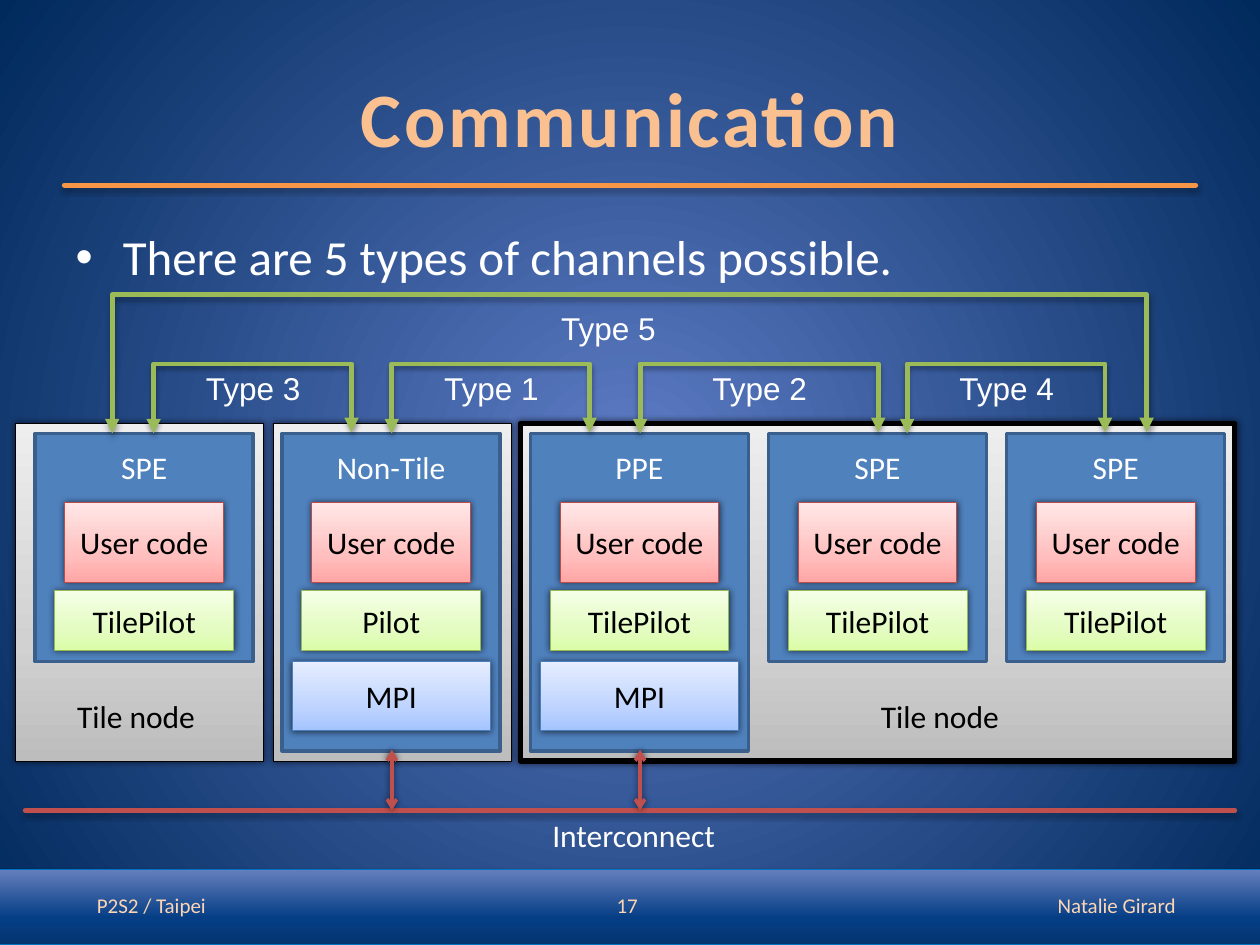
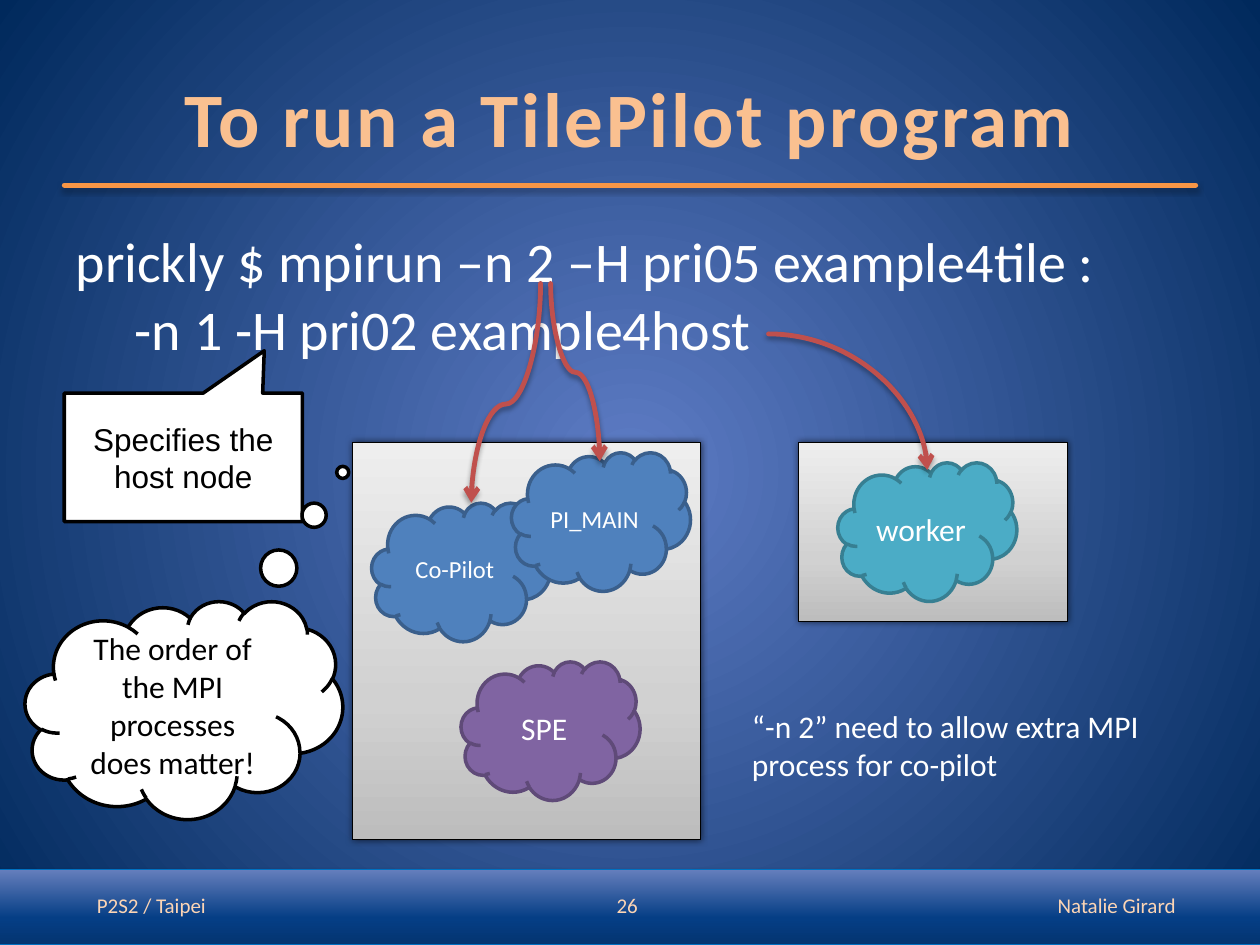
from lxml.etree import SubElement
from pptx import Presentation
from pptx.dml.color import RGBColor
from pptx.enum.shapes import MSO_CONNECTOR, MSO_SHAPE
from pptx.enum.text import MSO_ANCHOR, PP_ALIGN
from pptx.oxml.ns import qn
from pptx.util import Inches, Pt

COLUMNS, ROWS = 100, 75
COLORS = {
    "title": "FAC090", "footer": "FCD5B5", "rule": "F79646", "white": "FFFFFF",
    "black": "000000", "red": "C0504D", "green": "9BBB59", "band_line": "0070C0",
    "blue": "4F81BD", "blue_line": "3A5F8C", "purple": "8064A2", "purple_line": "5F4A78",
    "aqua": "4BACC6", "aqua_line": "377F92", "code_line": "BF4C48",
    "pilot_line": "98B955", "mpi_line": "4B7EBC",
}
GRADIENTS = {
    "page": {0: "5E7CC5", 100: "00295C"},
    "band": {0: "043470", 35: "053E85", 100: "667FBD"},
    "node": {0: "BDBDBD", 35: "D1D1D1", 100: "EEEEEE"},
    "code": {0: "FFA6A5", 35: "FFC0BF", 100: "FFE7E7"},
    "pilot": {0: "DAFDA7", 35: "E4FCC2", 100: "F5FFE7"},
    "mpi": {0: "A4C4FF", 35: "BFD4FF", 100: "E6EEFF"},
}
# opacity in percent, blur and distance in points, angle in degrees
SHADOWS = {"drop": (35, 3.1, 2, 90), "halo": (64, 4, 0, 0)}


def color(name):
    return RGBColor.from_string(COLORS[name])


def paint_gradient(gradient, name, radial=False):
    """Refill an a:gradFill element, from the centre out or from the bottom up."""
    for child in list(gradient):
        gradient.remove(child)
    stops = SubElement(gradient, qn("a:gsLst"))
    for position, value in GRADIENTS[name].items():
        stop = SubElement(stops, qn("a:gs"), pos=str(position * 1000))
        SubElement(stop, qn("a:srgbClr"), val=value)
    if radial:
        circle = SubElement(gradient, qn("a:path"), path="circle")
        SubElement(circle, qn("a:fillToRect"), dict.fromkeys("ltrb", "50000"))
    else:
        SubElement(gradient, qn("a:lin"), ang="16200000", scaled="0")


def cast_shadow(shape, name=None):
    """Replace the theme shadow; call it after the outline is set."""
    properties = shape._element.spPr
    effects = properties.find(qn("a:effectLst"))
    if effects is None:
        effects = SubElement(properties, qn("a:effectLst"))
    if name:
        opacity, blur, distance, angle = SHADOWS[name]
        shadow = SubElement(
            effects, qn("a:outerShdw"), blurRad=str(Pt(blur)), dist=str(Pt(distance)),
            dir=str(angle * 60000), rotWithShape="0")
        black = SubElement(shadow, qn("a:srgbClr"), val=COLORS["black"])
        SubElement(black, qn("a:alpha"), val=str(opacity * 1000))


class Deck:
    """Holds the style and the current page; lengths are grid columns and rows."""

    def __init__(self):
        self.file = Presentation()
        self.file.slide_width, self.file.slide_height = Inches(10), Inches(7.5)
        master = self.file.slide_master
        master.background.fill.gradient()
        paint_gradient(master.element.find(".//" + qn("a:gradFill")), "page", radial=True)
        self.page = None

    def x(self, columns):
        return round(self.file.slide_width * columns / COLUMNS)

    def y(self, rows):
        return round(self.file.slide_height * rows / ROWS)

    def frame(self, at):
        left, top, width, height = at
        return self.x(left), self.y(top), self.x(width), self.y(height)

    def place(self, shape, at):
        shape.left, shape.top, shape.width, shape.height = self.frame(at)

    def span(self, para, text, size, ink="white", font="Calibri"):
        span = para.add_run()
        span.text = text
        span.font.size, span.font.name = Pt(size), font
        span.font.color.rgb = color(ink)
        return span

    def add_page(self, title, number):
        self.page = self.file.slides.add_slide(self.file.slide_layouts[1])
        heading = self.page.shapes.title
        self.place(heading, (5, 1.5, 90, 15.5))
        span = self.span(heading.text_frame.paragraphs[0], title, 44, "title")
        span.font.bold = True
        span._r.get_or_add_rPr().set("spc", "150")
        self.box((-1.2, 69, 102.4, 6), "band", "band_line", shadow="drop")
        self.line((5.1, 14.7), (94.9, 14.7), "rule")
        for left, width, text, align in (
                (6.7, 16.5, "P2S2 / Taipei", PP_ALIGN.LEFT),
                (44.5, 7.1, number, PP_ALIGN.RIGHT),
                (76, 18.3, "Natalie Girard", PP_ALIGN.RIGHT)):
            self.label((left, 69.8, width, 4), [text], align, 12, "footer")

    def body(self, lines, size, bullet=True):
        """Write one paragraph; further lines hang under the first."""
        body = self.page.placeholders[1]
        self.place(body, (5, 17.5, 90, 49.5))
        para = body.text_frame.paragraphs[0]
        for index, text in enumerate(lines):
            if index:
                para.add_line_break()
            self.span(para, text, size)
        if not bullet:
            settings = para._p.get_or_add_pPr()
            settings.set("marL", str(Inches(0.47)))
            settings.set("indent", str(-Inches(0.47)))
            SubElement(settings, qn("a:buNone"))

    def label(self, at, lines, align=PP_ALIGN.CENTER, size=18, ink="white", font="Calibri"):
        frame = self.page.shapes.add_textbox(*self.frame(at)).text_frame
        frame.word_wrap = True
        frame.vertical_anchor = MSO_ANCHOR.MIDDLE
        for index, text in enumerate(lines):
            para = frame.add_paragraph() if index else frame.paragraphs[0]
            para.alignment = align
            self.span(para, text, size, ink, font)

    def box(self, at, fill, outline, weight=0.5, text="", size=18, ink="black",
            font="Calibri", kind=MSO_SHAPE.RECTANGLE, shadow=None, adjust=()):
        shape = self.page.shapes.add_shape(kind, *self.frame(at))
        for index, value in enumerate(adjust):
            shape.adjustments[index] = value
        if fill in GRADIENTS:
            shape.fill.gradient()
            paint_gradient(shape._element.spPr.find(qn("a:gradFill")), fill)
        else:
            shape.fill.solid()
            shape.fill.fore_color.rgb = color(fill)
        shape.line.color.rgb, shape.line.width = color(outline), Pt(weight)
        shape.shadow.inherit = False
        cast_shadow(shape, shadow)
        if text:
            frame = shape.text_frame
            frame.word_wrap = True
            frame.vertical_anchor = MSO_ANCHOR.MIDDLE
            para = frame.paragraphs[0]
            para.alignment = PP_ALIGN.CENTER
            self.span(para, text, size, ink, font)

    def line(self, start, end, ink, weight=2.75, head=None, tail=None,
             kind=MSO_CONNECTOR.STRAIGHT, shadow="drop"):
        connector = self.page.shapes.add_connector(
            kind, self.x(start[0]), self.y(start[1]), self.x(end[0]), self.y(end[1]))
        connector.line.color.rgb, connector.line.width = color(ink), Pt(weight)
        outline = connector.line._get_or_add_ln()
        outline.set("cap", "rnd")
        for tag, arrow in (("a:headEnd", head), ("a:tailEnd", tail)):
            if arrow:
                SubElement(outline, qn(tag), type=arrow)
        cast_shadow(connector, shadow)
        return connector

    def upright_line(self, start, end, bend, turn, ink, **style):
        """Connector that leaves vertically: laid out flat, then turned a quarter.

        bend is the share of the height at which it crosses over.
        """
        sign = 1 if turn == 90 else -1
        middle = [(a + b) / 2 for a, b in zip(start, end)]
        across, down = [(b - a) / 2 * sign for a, b in zip(start, end)]
        connector = self.line((middle[0] - down, middle[1] + across),
                              (middle[0] + down, middle[1] - across), ink, **style)
        connector.rotation = turn
        guides = connector._element.spPr.find(qn("a:prstGeom")).find(qn("a:avLst"))
        SubElement(guides, qn("a:gd"), name="adj1", fmla=f"val {round(bend * 100000)}")

    def bracket(self, left, right, rise):
        foot, slack = 34.4, 0.1
        self.upright_line((left, foot), (right, foot - slack), rise / slack, 90, "green",
                          head="triangle", tail="triangle", kind=MSO_CONNECTOR.ELBOW)

    def processor(self, left, name, library, has_mpi):
        """Blue unit with its software layers centred inside."""
        width = 17.3
        self.box((left, 34.4, width, 25.2 if has_mpi else 18.1), "blue", "blue_line", 2)
        layers = [("User code", "code", 39.9, 12.6, 6.3), (library, "pilot", 46.9, 14.2, 4.7)]
        if has_mpi:
            layers.append(("MPI", "mpi", 52.5, 15.7, 5.5))
        for text, style, top, size, height in layers:
            self.box((left + (width - size) / 2, top, size, height), style,
                     style + "_line", text=text, shadow="halo")
        self.label((left, 35.1, width, 4), [name])

    def cloud(self, left, top, text, fill, size=18):
        self.box((left, top, 14.2, 11), fill, fill + "_line", 2, text, size, "white",
                 kind=MSO_SHAPE.CLOUD)


def communication_page(deck):
    deck.add_page("Communication", "17")
    deck.body(["There are 5 types of channels possible."], 28)
    for left, width, weight in ((1.2, 19.7, 0.5), (21.7, 18.9, 0.5), (41.3, 56.7, 3)):
        deck.box((left, 33.6, width, 26.8), "node", "black", weight, shadow="halo")
    for left, name, library, has_mpi in (
            (2.8, "SPE", "TilePilot", False), (22.4, "Non-Tile", "Pilot", True),
            (42.1, "PPE", "TilePilot", True), (61, "SPE", "TilePilot", False),
            (79.9, "SPE", "TilePilot", False)):
        deck.processor(left, name, library, has_mpi)
    for center in (10.8, 74.6):
        deck.label((center - 7, 54.8, 14, 4), ["Tile node"], ink="black")

    deck.line((2, 64.3), (98, 64.3), "red")
    deck.label((41.5, 64.3, 17.6, 4), ["Interconnect"])
    for center in (31.1, 50.8):
        deck.line((center, 59.5), (center, 64.3), "red", 2, "arrow", "arrow", shadow="halo")

    for text, left, right, rise, center, top in (
            ("Type 1", 31.1, 46.8, 5.6, 39, 28.8), ("Type 2", 50.8, 69.7, 5.6, 60.3, 28.8),
            ("Type 3", 12.2, 27.9, 5.6, 20.1, 28.8), ("Type 4", 72, 87.7, 5.6, 79.9, 28.8),
            ("Type 5", 8.9, 91, 11.2, 48.3, 24)):
        deck.bracket(left, right, rise)
        deck.label((center - 6, top, 12, 4), [text], font="Arial")


def run_page(deck):
    deck.add_page("To run a TilePilot program", "26")
    deck.body(["prickly $ mpirun –n 2 –H pri05 example4tile :",
               "-n 1 -H pri02 example4host"], 32, bullet=False)
    for host in ((63.4, 35.1, 21.3, 14.2), (28, 35.1, 27.6, 31.5)):
        deck.box(host, "node", "black", shadow="halo")
    deck.cloud(36.6, 52.5, "SPE", "purple")
    deck.cloud(66.5, 36.7, "worker", "aqua")
    deck.cloud(29.5, 39.9, "Co-Pilot", "blue", 14)
    deck.cloud(40.6, 35.9, "PI_MAIN", "blue", 14)

    curve = {"tail": "arrow", "kind": MSO_CONNECTOR.CURVE}
    deck.upright_line((42.9, 22.5), (37.4, 39.9), 0.55, 90, "red", **curve)
    deck.upright_line((43.7, 22.5), (47.6, 36.6), 0.5, 270, "red", **curve)
    worker_arrow = deck.line((61, 26.5), (73.6, 37.3), "red", **curve)
    worker_arrow._element.spPr.find(qn("a:prstGeom")).set("prst", "curvedConnector2")

    deck.box((5.1, 31.2, 18.9, 10.2), "white", "black", 2, "Specifies the host node",
             font="Arial", kind=MSO_SHAPE.RECTANGULAR_CALLOUT, adjust=(0.34, -0.83))
    deck.box((2, 47.7, 25.2, 17.3), "white", "black", 2,
             "The order of the MPI processes does matter!",
             kind=MSO_SHAPE.CLOUD_CALLOUT, adjust=(0.5, -1.09))
    deck.label((58.7, 55.6, 36, 7.1), ["“-n 2” need to allow extra MPI",
                                       "process for co-pilot"], PP_ALIGN.LEFT)


def main():
    deck = Deck()
    communication_page(deck)
    run_page(deck)
    deck.file.save("out.pptx")


if __name__ == "__main__":
    main()
